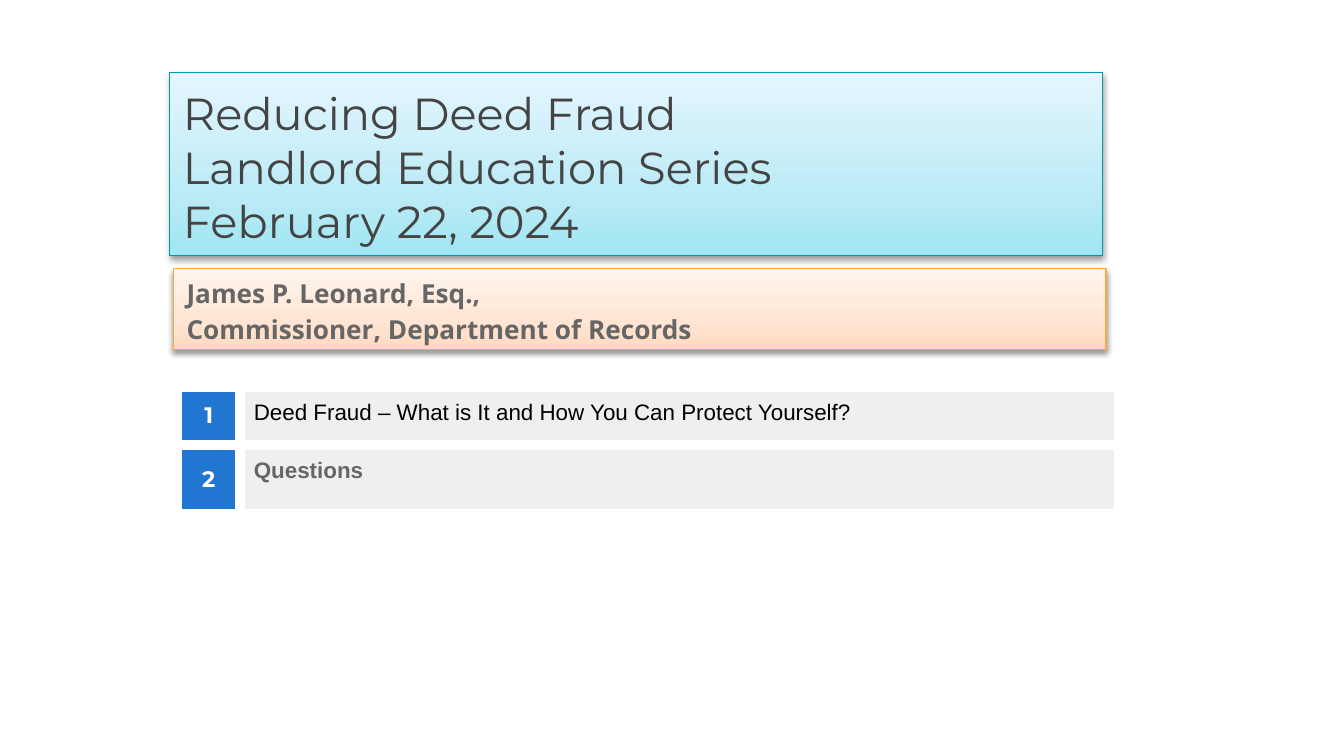
from dataclasses import dataclass

from lxml.etree import SubElement
from pptx import Presentation
from pptx.dml.color import RGBColor
from pptx.enum.shapes import MSO_SHAPE
from pptx.enum.text import MSO_ANCHOR, PP_ALIGN
from pptx.oxml import parse_xml
from pptx.oxml.ns import nsdecls, qn
from pptx.util import Pt

INSET = 7.2


@dataclass
class Panel:
    left: float
    top: float
    width: float
    height: float
    stops: dict[int, str]
    outline: str
    paragraphs: list[str]
    font: dict
    anchor: MSO_ANCHOR
    line_spacing: float


@dataclass
class AgendaRow:
    number: str
    topic: str
    height: float
    topic_font: dict


TITLE_FONT = {"name": "Montserrat", "size": Pt(24), "bold": False, "color": "444444"}
SPEAKER_FONT = {"name": "Open Sans", "size": Pt(14), "bold": True, "color": "666666"}
NUMBER_FONT = {"name": "Montserrat", "size": Pt(12), "bold": True, "color": "FFFFFF"}
TOPIC_FONT = {"name": "Arial", "size": Pt(12), "bold": False, "color": "000000"}
QUESTIONS_FONT = TOPIC_FONT | {"bold": True, "color": "666666"}

PANELS = [
    Panel(90.9, 38.9, 499.7, 97.9,
          {0: "A0E6F3", 35: "BDEBF6", 100: "E5F6FF"}, "0097A7",
          ["Reducing Deed Fraud\vLandlord Education Series\vFebruary 22, 2024"],
          TITLE_FONT, MSO_ANCHOR.TOP, 1),
    Panel(92.9, 144, 499.7, 43.2,
          {0: "FFDAC0", 35: "FFE5D3", 100: "FFF5EE"}, "FEA83A",
          ["James P. Leonard, Esq.,", "Commissioner, Department of Records"],
          SPEAKER_FONT, MSO_ANCHOR.MIDDLE, 1.15),
]
AGENDA = [
    AgendaRow("1", "Deed Fraud – What is It and How You Can Protect Yourself?", 30.8, TOPIC_FONT),
    AgendaRow("2", "Questions", 37.2, QUESTIONS_FONT),
]
COLUMN_WIDTHS = [33.8, 470.9]


def color(value: str) -> RGBColor:
    return RGBColor.from_string(value)


def format_font(font, values: dict) -> None:
    for name, value in values.items():
        if name == "color":
            font.color.rgb = color(value)
        else:
            setattr(font, name, value)


def add_gradient_and_shadow(box, stops: dict[int, str]) -> None:
    """Fill from bottom to top, with a soft shadow below."""
    stop_xml = "".join(
        f'<a:gs pos="{position * 1000}"><a:srgbClr val="{value}"/></a:gs>'
        for position, value in stops.items())
    properties = box.element.spPr
    properties.find(qn("a:prstGeom")).addnext(parse_xml(
        f'<a:gradFill {nsdecls("a")} rotWithShape="1"><a:gsLst>{stop_xml}</a:gsLst>'
        '<a:lin ang="16200000" scaled="0"/></a:gradFill>'))
    properties.find(qn("a:effectLst")).append(parse_xml(
        f'<a:outerShdw {nsdecls("a")} blurRad="{Pt(3.1)}" dist="{Pt(1.6)}" dir="5400000"'
        ' rotWithShape="0"><a:srgbClr val="000000"><a:alpha val="38000"/></a:srgbClr>'
        '</a:outerShdw>'))


def draw_panel(page, panel: Panel) -> None:
    box = page.shapes.add_shape(MSO_SHAPE.RECTANGLE, Pt(panel.left), Pt(panel.top),
                                Pt(panel.width), Pt(panel.height))
    box.shadow.inherit = False
    box.line.color.rgb = color(panel.outline)
    box.line.width = Pt(0.75)
    add_gradient_and_shadow(box, panel.stops)
    frame = box.text_frame
    frame.word_wrap = True
    frame.vertical_anchor = panel.anchor
    for side in ("left", "right", "top", "bottom"):
        setattr(frame, f"margin_{side}", Pt(INSET))
    for index, text in enumerate(panel.paragraphs):
        para = frame.add_paragraph() if index else frame.paragraphs[0]
        para.text = text
        para.alignment = PP_ALIGN.LEFT
        para.line_spacing = panel.line_spacing
        for span in para.runs:
            format_font(span.font, panel.font)


def fill_cell(cell, text: str, fill: str, font: dict,
              anchor: MSO_ANCHOR, alignment: PP_ALIGN) -> None:
    cell.fill.solid()
    cell.fill.fore_color.rgb = color(fill)
    cell.vertical_anchor = anchor
    for side in ("left", "right", "top", "bottom"):
        setattr(cell, f"margin_{side}", Pt(INSET))
    para = cell.text_frame.paragraphs[0]
    para.text = text
    para.alignment = alignment
    format_font(para.runs[0].font, font)
    # White borders come before the fill in the cell properties
    properties = cell._tc.get_or_add_tcPr()
    for index, name in enumerate(("lnL", "lnR", "lnT", "lnB")):
        border = SubElement(properties, qn(f"a:{name}"), w=str(Pt(6)))
        SubElement(SubElement(border, qn("a:solidFill")), qn("a:srgbClr"), val="FFFFFF")
        properties.insert(index, border)


def draw_agenda(page, rows: list[AgendaRow], left: float, top: float) -> None:
    table = page.shapes.add_table(
        len(rows), len(COLUMN_WIDTHS), Pt(left), Pt(top), Pt(sum(COLUMN_WIDTHS)),
        Pt(sum(row.height for row in rows))).table
    table.first_row = table.horz_banding = False
    for column, width in zip(table.columns, COLUMN_WIDTHS):
        column.width = Pt(width)
    for index, row in enumerate(rows):
        table.rows[index].height = Pt(row.height)
        fill_cell(table.cell(index, 0), row.number, "2176D2", NUMBER_FONT,
                  MSO_ANCHOR.MIDDLE, PP_ALIGN.CENTER)
        fill_cell(table.cell(index, 1), row.topic, "EFEFEF", row.topic_font,
                  MSO_ANCHOR.TOP, PP_ALIGN.LEFT)


def main() -> None:
    deck = Presentation()
    deck.slide_width, deck.slide_height = Pt(720), Pt(405)
    page = deck.slides.add_slide(deck.slide_layouts[6])

    # Title and speaker
    for panel in PANELS:
        draw_panel(page, panel)

    # Numbered agenda
    draw_agenda(page, AGENDA, 95, 207.4)

    deck.save("out.pptx")


if __name__ == "__main__":
    main()
